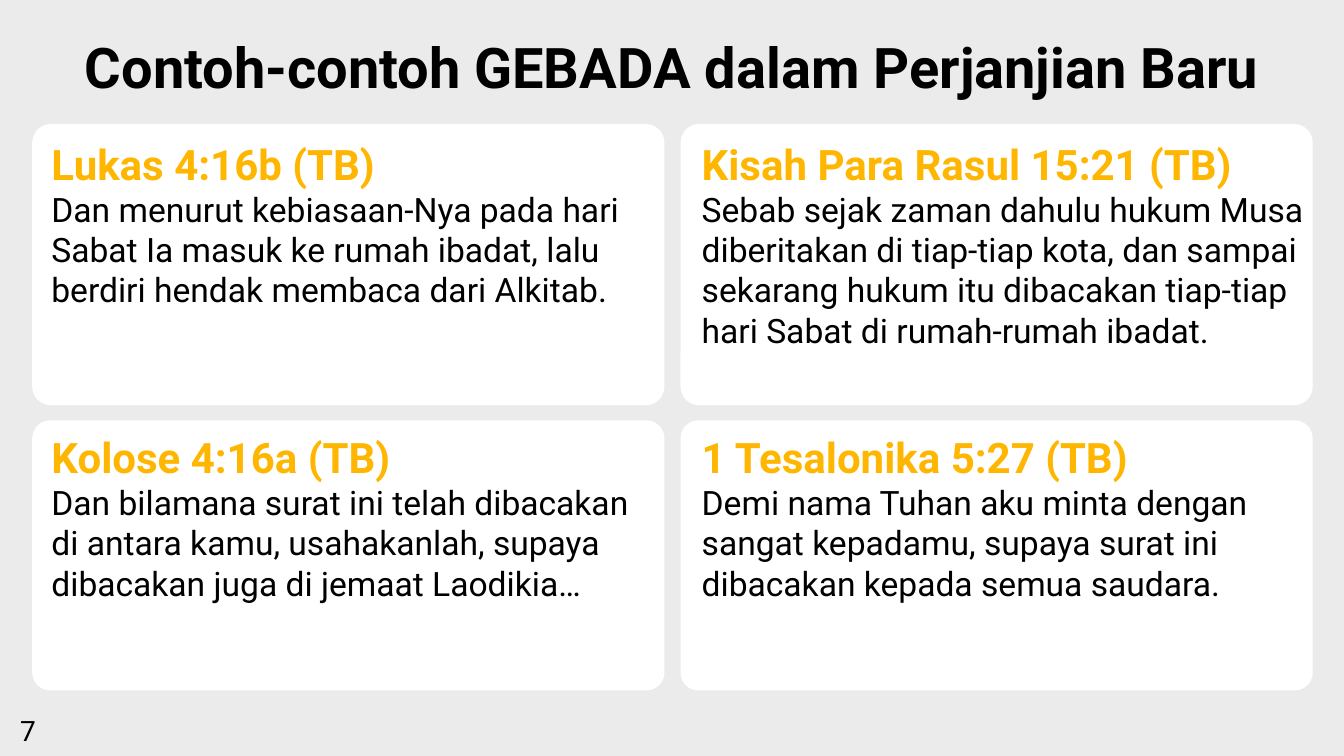
from dataclasses import dataclass

from pptx import Presentation
from pptx.dml.color import RGBColor
from pptx.enum.shapes import MSO_SHAPE
from pptx.enum.text import MSO_ANCHOR, MSO_AUTO_SIZE, PP_ALIGN
from pptx.slide import Slide
from pptx.text.text import TextFrame
from pptx.util import Inches, Pt

WIDE, HIGH = 13.33, 7.5
FACE = "Roboto"
HUES = {"page": "EBEBEB", "card": "FFFFFF", "head": "FFB600", "text": "000000"}


@dataclass(frozen=True)
class Track:
    """A grid column or row: start, size and text start, in inches."""
    start: float
    size: float
    text: float


@dataclass(frozen=True)
class Verse:
    col: int
    row: int
    wide: float
    high: float
    head: str
    body: str


COLS = [Track(0.32, 6.27, 0.51), Track(6.75, 6.27, 6.96)]
ROWS = [Track(1.23, 2.79, 1.37), Track(4.17, 2.68, 4.28)]

VERSES = [
    Verse(0, 0, 5.93, 1.72, "Lukas 4:16b (TB)",
          "Dan menurut kebiasaan-Nya pada hari Sabat Ia masuk ke rumah ibadat, "
          "lalu berdiri hendak membaca dari Alkitab."),
    Verse(1, 0, 6.06, 2.52, "Kisah Para Rasul 15:21 (TB)",
          "Sebab sejak zaman dahulu hukum Musa diberitakan di tiap-tiap kota, "
          "dan sampai sekarang hukum itu dibacakan tiap-tiap hari Sabat di "
          "rumah-rumah ibadat."),
    Verse(0, 1, 5.79, 2.12, "Kolose 4:16a (TB)",
          "Dan bilamana surat ini telah dibacakan di antara kamu, usahakanlah, "
          "supaya dibacakan juga di jemaat Laodikia…"),
    Verse(1, 1, 5.86, 1.72, "1 Tesalonika 5:27 (TB)",
          "Demi nama Tuhan aku minta dengan sangat kepadamu, supaya surat ini "
          "dibacakan kepada semua saudara."),
]


def tint(name: str) -> RGBColor:
    return RGBColor.from_string(HUES[name])


def add_box(slide: Slide, x: float, y: float, w: float, h: float) -> TextFrame:
    box = slide.shapes.add_textbox(Inches(x), Inches(y), Inches(w), Inches(h))
    frame = box.text_frame
    frame.word_wrap = True
    frame.auto_size = MSO_AUTO_SIZE.SHAPE_TO_FIT_TEXT
    frame.vertical_anchor = MSO_ANCHOR.TOP
    frame.margin_left = frame.margin_right = 0
    frame.margin_top = frame.margin_bottom = 0
    return frame


def add_line(frame: TextFrame, text: str, size: int, hue: str = "text",
             bold: bool = False, align: PP_ALIGN = PP_ALIGN.LEFT) -> None:
    first = frame.paragraphs[0]
    line = frame.add_paragraph() if first.runs else first
    line.text = text
    line.alignment = align
    font = line.font
    font.name, font.size, font.bold = FACE, Pt(size), bold
    font.color.rgb = tint(hue)


def add_card(slide: Slide, col: Track, row: Track) -> None:
    card = slide.shapes.add_shape(
        MSO_SHAPE.ROUNDED_RECTANGLE, Inches(col.start), Inches(row.start),
        Inches(col.size), Inches(row.size))
    card.adjustments[0] = 0.066
    card.shadow.inherit = False
    card.fill.solid()
    card.fill.fore_color.rgb = tint("card")
    card.line.fill.background()


def add_verse(slide: Slide, verse: Verse) -> None:
    frame = add_box(slide, COLS[verse.col].text, ROWS[verse.row].text,
                    verse.wide, verse.high)
    add_line(frame, verse.head, 30, "head", bold=True)
    add_line(frame, verse.body, 24)


def main() -> None:
    deck = Presentation()
    deck.slide_width, deck.slide_height = Inches(WIDE), Inches(HIGH)
    slide = deck.slides.add_slide(deck.slide_layouts[6])
    slide.background.fill.solid()
    slide.background.fill.fore_color.rgb = tint("page")

    # Page number and title
    add_line(add_box(slide, 0.2, 7.08, 1.11, 0.34), "7", 20)
    add_line(add_box(slide, 0.25, 0.32, 12.82, 0.67),
             "Contoh-contoh GEBADA dalam Perjanjian Baru", 40,
             bold=True, align=PP_ALIGN.CENTER)

    # White cards, then the verses on them
    for col in COLS:
        for row in ROWS:
            add_card(slide, col, row)
    for verse in VERSES:
        add_verse(slide, verse)

    deck.save("out.pptx")


if __name__ == "__main__":
    main()
